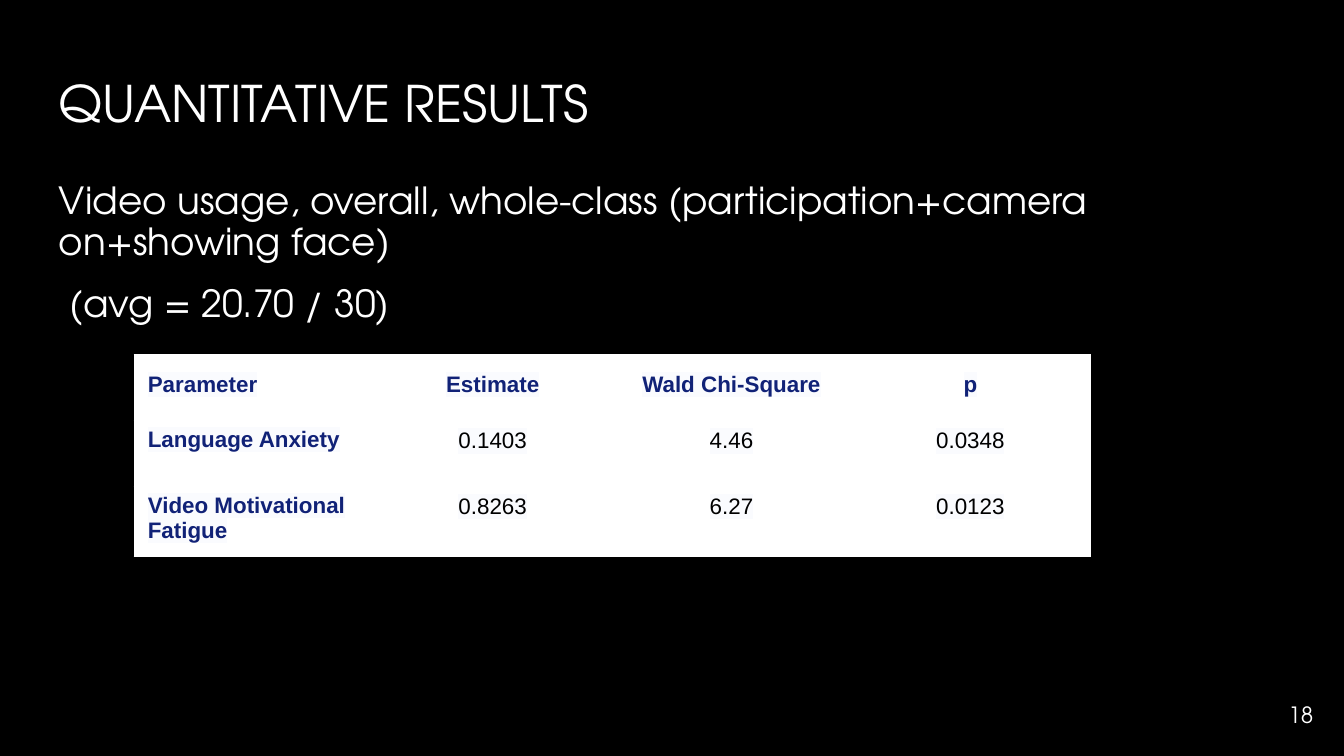
"""Build the quantitative results slide with its table of estimates."""
from lxml.etree import SubElement
from pptx import Presentation
from pptx.dml.color import RGBColor as RGB
from pptx.enum.text import MSO_ANCHOR as Anchor, PP_ALIGN as Align
from pptx.oxml.ns import qn
from pptx.util import Inches, Pt

TITLE = "QUANTITATIVE RESULTS"
BODY = [
    "Video usage, overall, whole-class (participation+camera on+showing face)",
    " (avg = 20.70 / 30)",
]
ROWS = [
    ("Parameter", "Estimate", "Wald Chi-Square", "p"),
    ("Language Anxiety", "0.1403", "4.46", "0.0348"),
    ("Video Motivational Fatigue", "0.8263", "6.27", "0.0123"),
]
NUMBER = "18"

WIDE = 10
HIGH = WIDE * 9 / 16
EDGE, PAD = 0.34, 0.1
SPAN = WIDE - 2 * EDGE
GRID_LEFT, GRID_TOP, GRID_WIDE = 1, 2.64, 7.11
HEIGHTS = (0.49, 0.49, 0.52)
FACE, CELL_FACE = "TeX Gyre Adventor", "Arial"

BLACK = RGB(0, 0, 0)
WHITE = RGB(255, 255, 255)
NAVY = RGB(0x11, 0x22, 0x77)
PALE = RGB(0xFA, 0xFB, 0xFE)


def style(run, face, size, color, bold=False):
    font = run.font
    font.name, font.size, font.bold = face, Pt(size), bold
    font.color.rgb = color


def pad(item, side, end):
    item.margin_left = item.margin_right = Inches(side)
    item.margin_top = item.margin_bottom = Inches(end)


def add_text(slide, box, lines, size, gap=0, lead=None, align=Align.LEFT,
             anchor=Anchor.TOP):
    frame = slide.shapes.add_textbox(*map(Inches, box)).text_frame
    frame.word_wrap = True
    frame.vertical_anchor = anchor
    pad(frame, PAD, PAD)
    frame.text = "\n".join(lines)
    for i, par in enumerate(frame.paragraphs):
        par.alignment, par.line_spacing = align, lead
        if i:
            par.space_before = Pt(gap)
        style(par.runs[0], FACE, size, WHITE)


def mark(run, color):
    props = run.font._element
    light = SubElement(props, qn("a:highlight"))
    SubElement(light, qn("a:srgbClr")).set("val", str(color))
    props.find(qn("a:solidFill")).addnext(light)


def fill_cell(cell, text, row, col):
    head, label = row == 0, col == 0
    cell.fill.solid()
    cell.fill.fore_color.rgb = WHITE
    if head:
        pad(cell, PAD, PAD)
    elif not label:
        pad(cell, 0.06, 0.03)
    cell.text = text
    par = cell.text_frame.paragraphs[0]
    par.alignment = Align.LEFT if label else Align.CENTER
    if head or not label:
        par.line_spacing, par.space_after = 1.15, Pt(11)
    strong = head or label
    style(par.runs[0], CELL_FACE, 12, NAVY if strong else BLACK, strong)
    mark(par.runs[0], PALE)


def add_grid(slide):
    count = len(ROWS[0])
    box = (GRID_LEFT, GRID_TOP, GRID_WIDE, sum(HEIGHTS))
    table = slide.shapes.add_table(len(ROWS), count, *map(Inches, box)).table
    table.first_row = table.horz_banding = False
    for col in table.columns:
        col.width = Inches(GRID_WIDE / count)
    for r, (texts, high) in enumerate(zip(ROWS, HEIGHTS)):
        table.rows[r].height = Inches(high)
        for c, text in enumerate(texts):
            fill_cell(table.cell(r, c), text, r, c)


def main():
    deck = Presentation()
    deck.slide_width, deck.slide_height = Inches(WIDE), Inches(HIGH)
    slide = deck.slides.add_slide(deck.slide_layouts[6])
    slide.background.fill.solid()
    slide.background.fill.fore_color.rgb = BLACK
    add_text(slide, (EDGE, 0.49, SPAN, 0.63), [TITLE], 27, lead=0.9)
    add_text(slide, (EDGE, 1.26, SPAN, 3.74), BODY, 20, gap=12, lead=0.9)
    add_grid(slide)
    add_text(slide, (9.27, 5.1, 0.6, 0.43), [NUMBER], 12,
             align=Align.RIGHT, anchor=Anchor.MIDDLE)
    deck.save("out.pptx")


if __name__ == "__main__":
    main()
